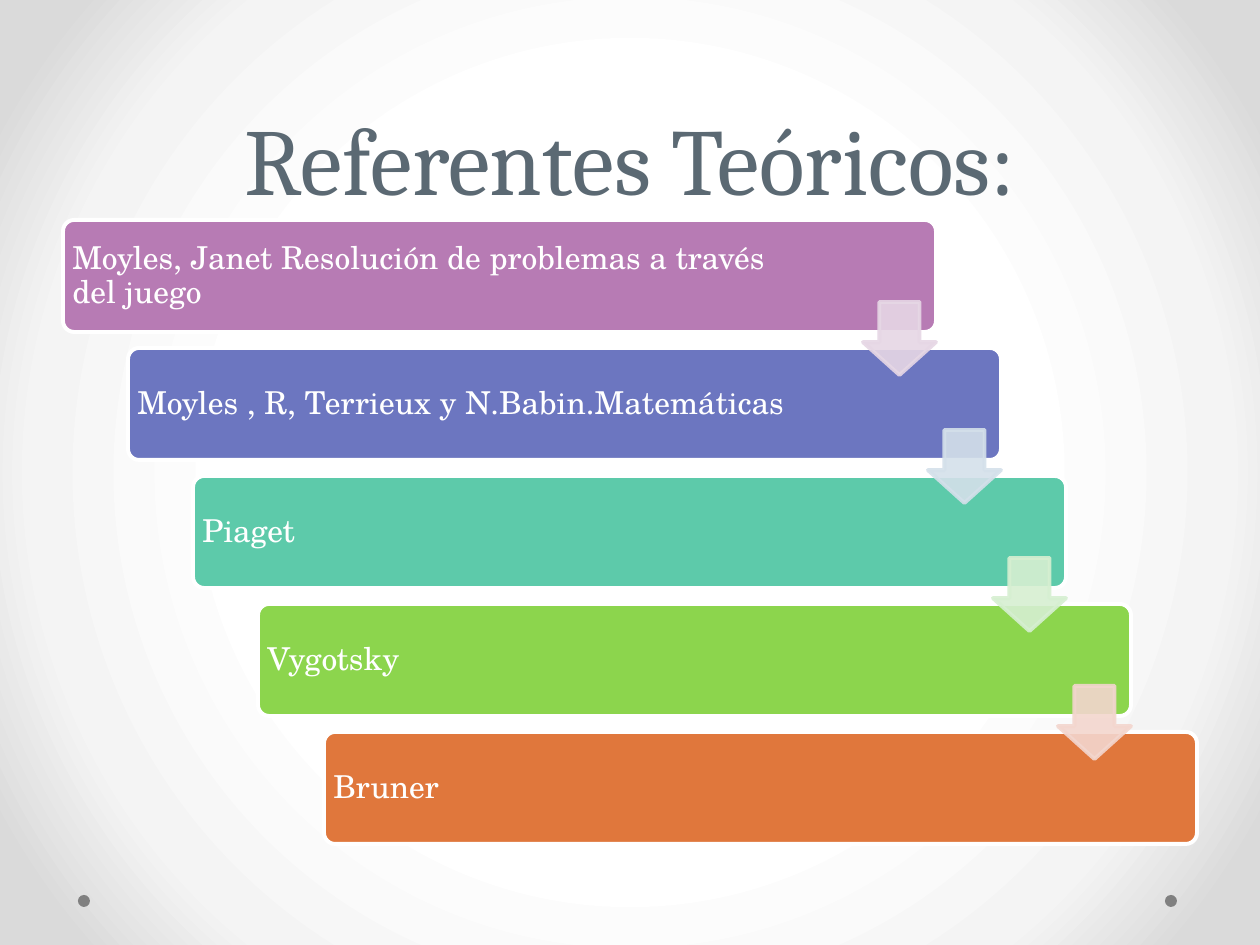
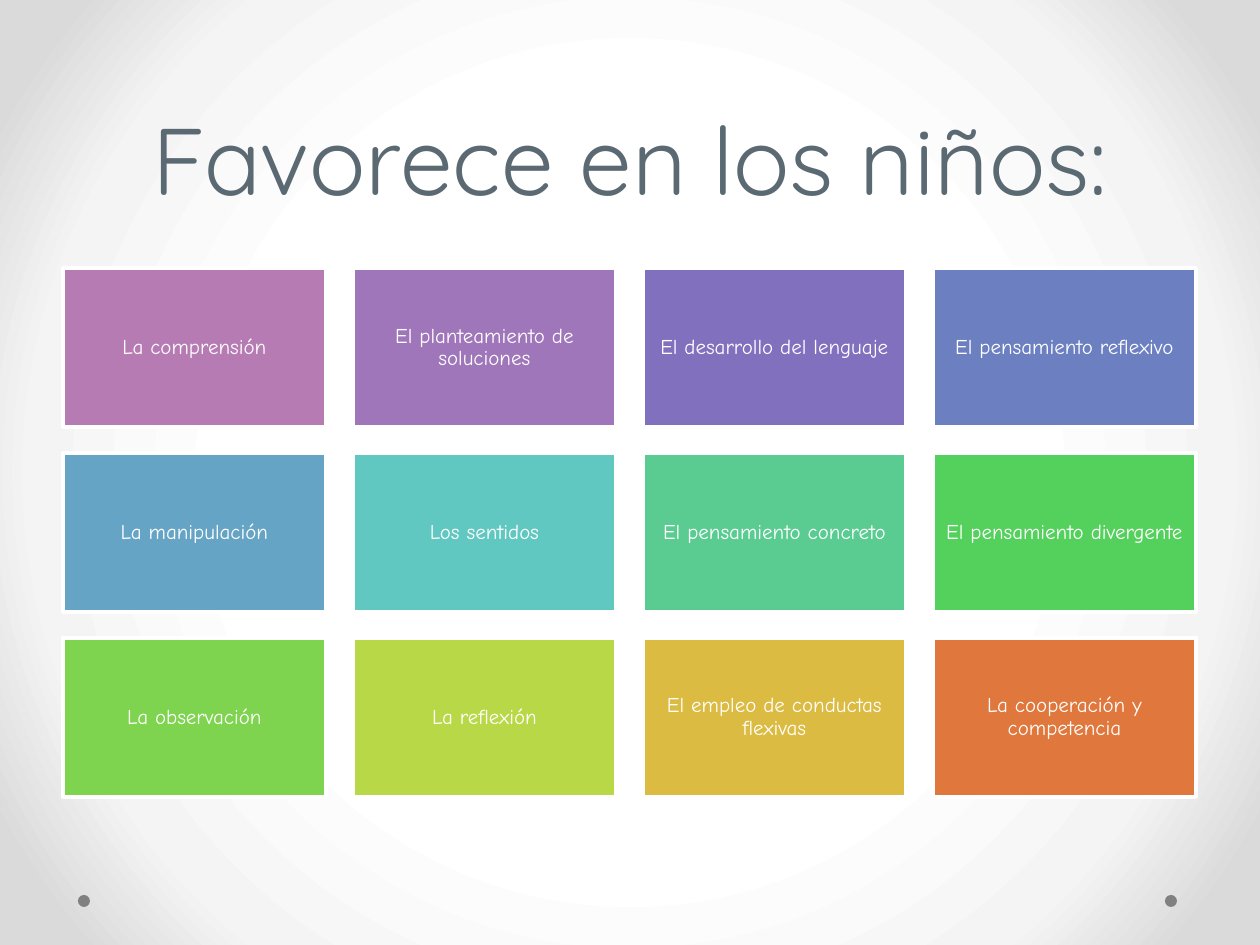
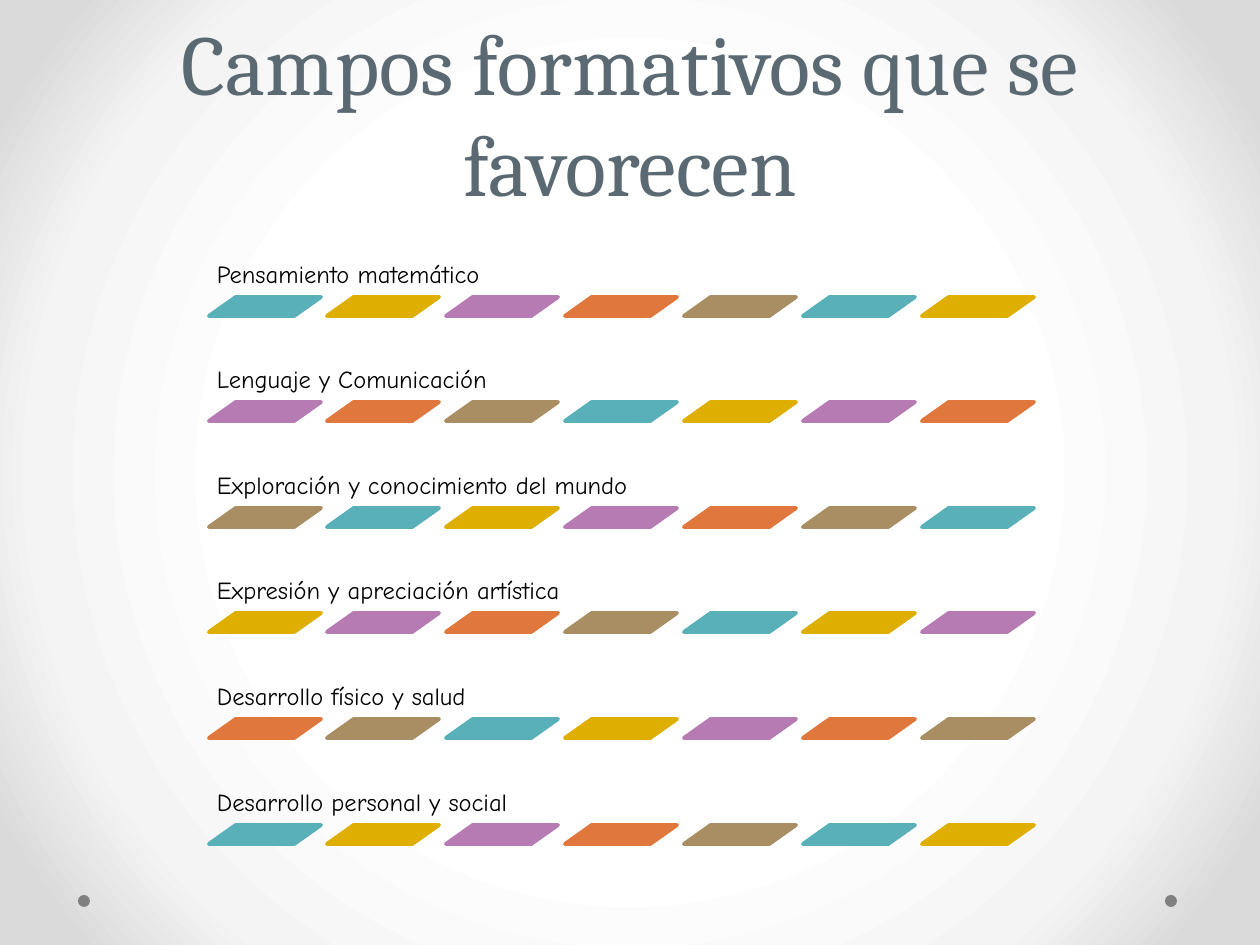
from pptx import Presentation
from pptx.dml.color import RGBColor
from pptx.enum.shapes import MSO_SHAPE
from pptx.enum.text import MSO_ANCHOR, PP_ALIGN
from pptx.oxml import parse_xml
from pptx.oxml.ns import nsdecls, qn
from pptx.util import Inches, Pt

# Scale: 1260 x 945 px on a 10 x 7.5 inch slide
WIDTH, HEIGHT = 1260, 945
PX = Inches(10) / WIDTH

RECTANGLE = MSO_SHAPE.RECTANGLE
ROUNDED = MSO_SHAPE.ROUNDED_RECTANGLE
DOWN_ARROW = MSO_SHAPE.DOWN_ARROW
PARALLELOGRAM = MSO_SHAPE.PARALLELOGRAM
ELLIPSE = MSO_SHAPE.OVAL
LEFT, CENTER = PP_ALIGN.LEFT, PP_ALIGN.CENTER
MIDDLE, BOTTOM = MSO_ANCHOR.MIDDLE, MSO_ANCHOR.BOTTOM

SERIF, ROUND_SANS = "Cambria", "Quicksand"
SCHOOL, HAND = "TeX Gyre Schola", "Comic Neue"

# Colours
WHITE = RGBColor(0xFF, 0xFF, 0xFF)
BLACK = RGBColor(0x00, 0x00, 0x00)
SLATE = RGBColor(0x5B, 0x69, 0x73)
GRAY = RGBColor(0x80, 0x80, 0x80)
PURPLE = RGBColor(0xB7, 0x7B, 0xB4)
ORANGE = RGBColor(0xE0, 0x77, 0x3C)
TEAL = RGBColor(0x59, 0xB0, 0xB9)
GOLD = RGBColor(0xDE, 0xAE, 0x00)
BROWN = RGBColor(0xA9, 0x8D, 0x63)
INDIGO = RGBColor(0x6C, 0x76, 0xC0)
MINT = RGBColor(0x5D, 0xCA, 0xAA)
LIME = RGBColor(0x8C, 0xD5, 0x4D)
PALE_PURPLE = RGBColor(0xE6, 0xD7, 0xE5)
PALE_BLUE = RGBColor(0xD4, 0xE0, 0xEA)
PALE_GREEN = RGBColor(0xD6, 0xEF, 0xD1)
PALE_ORANGE = RGBColor(0xF3, 0xD6, 0xCE)
VIOLET = RGBColor(0xA0, 0x76, 0xBA)
DEEP_VIOLET = RGBColor(0x80, 0x70, 0xBE)
BLUE = RGBColor(0x6B, 0x7F, 0xC1)
SKY = RGBColor(0x65, 0xA4, 0xC5)
AQUA = RGBColor(0x60, 0xC8, 0xC0)
JADE = RGBColor(0x5A, 0xCC, 0x92)
GREEN = RGBColor(0x54, 0xD0, 0x5C)
LEAF = RGBColor(0x7E, 0xD4, 0x4E)
CITRUS = RGBColor(0xB9, 0xD8, 0x48)
MUSTARD = RGBColor(0xDC, 0xBB, 0x42)

BACKGROUND_STOPS = [(50, WHITE), (76, RGBColor(0xF4, 0xF4, 0xF4)),
                    (92, RGBColor(0xDA, 0xDA, 0xDA))]

# Content
THEORISTS = [
    ("Moyles, Janet Resolución de problemas a través del juego", PURPLE),
    ("Moyles , R, Terrieux y N.Babin.Matemáticas", INDIGO),
    ("Piaget", MINT),
    ("Vygotsky", LIME),
    ("Bruner", ORANGE),
]
ARROW_COLORS = [PALE_PURPLE, PALE_BLUE, PALE_GREEN, PALE_ORANGE]
BENEFITS = [
    ("La comprensión", PURPLE),
    ("El planteamiento de soluciones", VIOLET),
    ("El desarrollo del lenguaje", DEEP_VIOLET),
    ("El pensamiento reflexivo", BLUE),
    ("La manipulación", SKY),
    ("Los sentidos", AQUA),
    ("El pensamiento concreto", JADE),
    ("El pensamiento divergente", GREEN),
    ("La observación", LEAF),
    ("La reflexión", CITRUS),
    ("El empleo de conductas flexivas", MUSTARD),
    ("La cooperación y competencia", ORANGE),
]
FIELDS = [
    "Pensamiento matemático",
    "Lenguaje y Comunicación",
    "Exploración y conocimiento del mundo",
    "Expresión y apreciación artística",
    "Desarrollo físico y salud",
    "Desarrollo personal y social",
]
STRIPE_COLORS = [TEAL, GOLD, PURPLE, ORANGE, BROWN]


def emu(length):
    return round(length * PX)


def write(frame, text, *, size, font, color=WHITE, align=LEFT, anchor=MIDDLE,
          spacing=0.9, insets=(6, 6, 6, 6)):
    """Fill a text frame; insets are left, top, right, bottom in px."""
    frame.word_wrap = True
    frame.vertical_anchor = anchor
    (frame.margin_left, frame.margin_top,
     frame.margin_right, frame.margin_bottom) = map(emu, insets)
    paragraph = frame.paragraphs[0]
    paragraph.alignment = align
    paragraph.line_spacing = spacing
    run = paragraph.add_run()
    run.text = text
    run.font.size = Pt(size)
    run.font.name = font
    run.font.color.rgb = color


class Deck:
    def __init__(self):
        self.presentation = Presentation()
        self.presentation.slide_width = emu(WIDTH)
        self.presentation.slide_height = emu(HEIGHT)
        self.slide = None
        self.set_background()

    def set_background(self):
        master = self.presentation.slide_master
        master.background.fill.solid()
        properties = master.element.find(".//" + qn("p:bgPr"))
        stops = "".join(
            f'<a:gs pos="{position * 1000}"><a:srgbClr val="{color}"/></a:gs>'
            for position, color in BACKGROUND_STOPS)
        properties.replace(properties[0], parse_xml(
            f'<a:gradFill {nsdecls("a")} rotWithShape="1"><a:gsLst>{stops}</a:gsLst>'
            '<a:path path="circle"><a:fillToRect l="50000" t="50000" r="50000" '
            'b="50000"/></a:path></a:gradFill>'))

    def add_slide(self, title, font=SERIF, size=54):
        self.slide = self.presentation.slides.add_slide(
            self.presentation.slide_layouts[6])
        for left in (1165, 78):
            self.shape(ELLIPSE, left, 895, 12, 12, GRAY)
        self.text(title, 63, 0, 1134, 220, size=size, font=font, color=SLATE,
                  align=CENTER, anchor=BOTTOM, spacing=Pt(58),
                  insets=(13, 6, 13, 6))

    def text(self, text, left, top, width, height, **style):
        box = self.slide.shapes.add_textbox(*map(emu, (left, top, width, height)))
        write(box.text_frame, text, **style)

    def shape(self, kind, left, top, width, height, fill, line=None,
              adjustments=(), opacity=None):
        shape = self.slide.shapes.add_shape(
            kind, *map(emu, (left, top, width, height)))
        shape.shadow.inherit = False
        for index, value in enumerate(adjustments):
            shape.adjustments[index] = value
        shape.fill.solid()
        shape.fill.fore_color.rgb = fill
        if line is None:
            shape.line.fill.background()
        else:
            shape.line.color.rgb = line
            shape.line.width = Pt(2.25)
        if opacity is not None:
            for color in shape.element.spPr.iter(qn("a:srgbClr")):
                color.append(parse_xml(
                    f'<a:alpha {nsdecls("a")} val="{opacity * 1000}"/>'))
        return shape


def add_theorists(deck):
    deck.add_slide("Referentes Teóricos:")
    # Staircase of bars, then the arrows over it
    steps = [(63 + 261 * index // 4, 220 + 128 * index)
             for index in range(len(THEORISTS))]
    for (left, top), (name, color) in zip(steps, THEORISTS):
        bar = deck.shape(ROUNDED, left, top, 873, 112, color, WHITE, [0.1])
        write(bar.text_frame, name, size=18, font=SCHOOL, insets=(6, 6, 145, 6))
    for (left, top), color in zip(steps, ARROW_COLORS):
        deck.shape(DOWN_ARROW, left + 800, top + 82, 73, 73, color, color,
                   [0.55, 0.45], opacity=90)


def add_benefits(deck):
    deck.add_slide("Favorece en los niños:", font=ROUND_SANS)
    # Grid of four columns
    for index, (benefit, color) in enumerate(BENEFITS):
        row, column = divmod(index, 4)
        card = deck.shape(RECTANGLE, 63 + 290 * column, 268 + 185 * row,
                          263, 159, color, WHITE)
        write(card.text_frame, benefit, size=12, font=HAND, align=CENTER)


def add_fields(deck):
    deck.add_slide("Campos formativos que se favorecen", size=48.6)
    # Label above a stripe of seven pieces; colours run on from row to row
    for row, field in enumerate(FIELDS):
        top = 297 + 528 * row // 5
        deck.text(field, 209, top - 77, 842, 77, size=14, font=HAND,
                  color=BLACK, anchor=BOTTOM, insets=(8, 8, 8, 8))
        for column in range(7):
            color = STRIPE_COLORS[(7 * row + column) % len(STRIPE_COLORS)]
            deck.shape(PARALLELOGRAM, 209 + 713 * column // 6, top, 112, 19,
                       color, color, [1.41])


def main():
    deck = Deck()
    add_theorists(deck)
    add_benefits(deck)
    add_fields(deck)
    deck.presentation.save("out.pptx")


if __name__ == "__main__":
    main()
